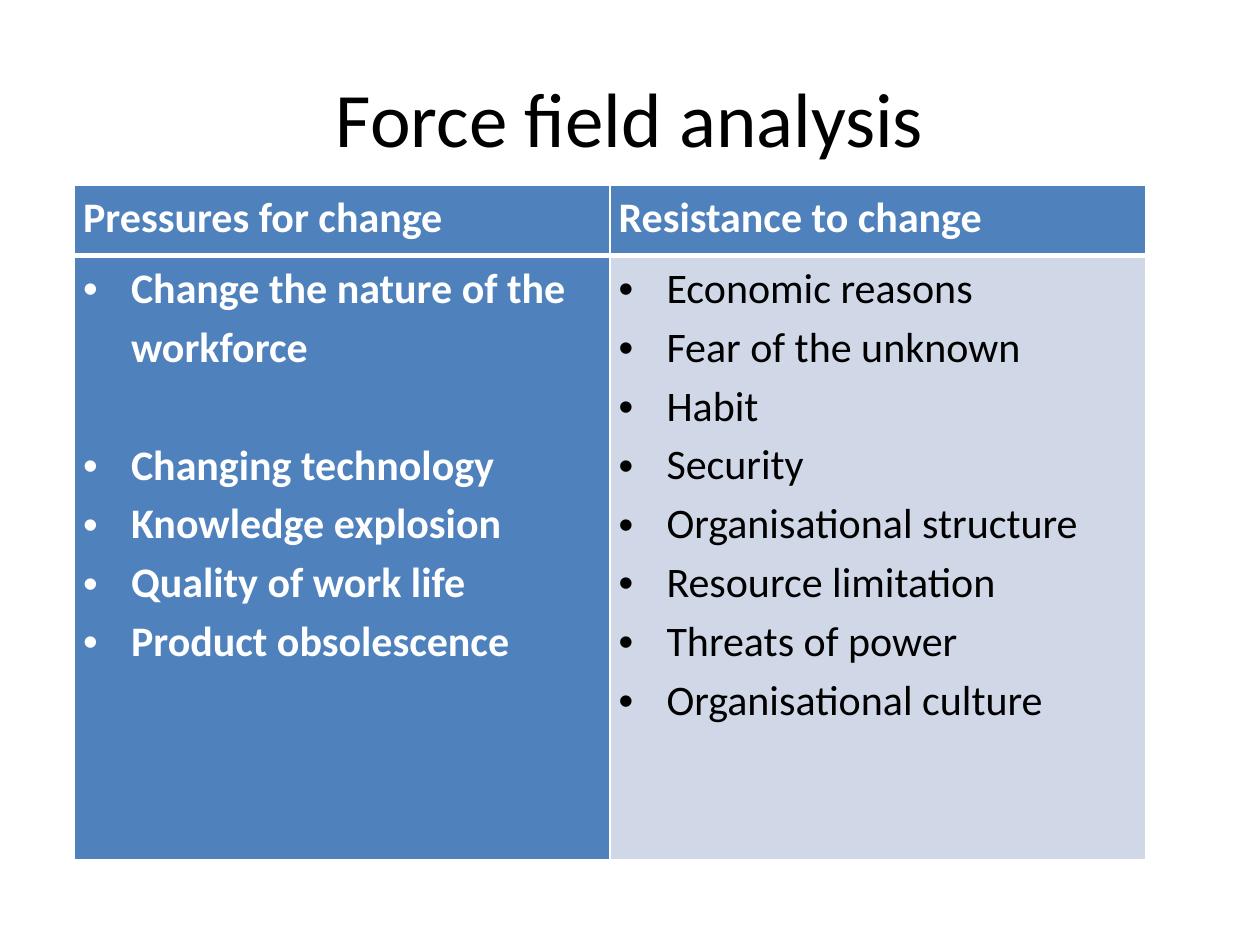
from pptx import Presentation
from pptx.dml.color import RGBColor as RGB
from pptx.enum.text import MSO_ANCHOR as Anchor, PP_ALIGN as Align
from pptx.oxml import parse_xml
from pptx.oxml.ns import nsdecls
from pptx.util import Inches, Pt

WHITE = RGB(0xFF, 0xFF, 0xFF)
BLACK = RGB(0, 0, 0)
BLUE = RGB(0x4F, 0x81, 0xBD)
PALE = RGB(0xD0, 0xD8, 0xE8)

HEADS = ["Pressures for change", "Resistance to change"]
PUSH = ["Change the nature of the workforce", "Changing technology",
        "Knowledge explosion", "Quality of work life",
        "Product obsolescence"]
RESIST = ["Economic reasons", "Fear of the unknown", "Habit", "Security",
          "Organisational structure", "Resource limitation",
          "Threats of power", "Organisational culture"]


class Deck:
    font = "Calibri"
    size = 24
    indent = 0.38

    def __init__(self):
        self.prs = Presentation()
        self.prs.slide_width = Inches(10)
        self.prs.slide_height = Inches(7.5)
        self.slide = self.prs.slides.add_slide(self.prs.slide_layouts[6])

    def style(self, para, size, color, bold=False):
        font = para.font
        font.name, font.size, font.bold = self.font, Pt(size), bold
        font.color.rgb = color

    def title(self, text, x, y, w, h):
        box = self.slide.shapes.add_textbox(
            Inches(x), Inches(y), Inches(w), Inches(h))
        frame = box.text_frame
        frame.word_wrap = True
        frame.vertical_anchor = Anchor.MIDDLE
        para = frame.paragraphs[0]
        para.text = text
        para.alignment = Align.CENTER
        self.style(para, 44, BLACK)

    def table(self, x, y, cols, rows):
        table = self.slide.shapes.add_table(
            len(rows), len(cols), Inches(x), Inches(y),
            Inches(sum(cols)), Inches(sum(rows))).table
        for col, width in zip(table.columns, cols):
            col.width = Inches(width)
        for row, height in zip(table.rows, rows):
            row.height = Inches(height)
        return table

    def edges(self, cell, top=1, bottom=1):
        props = cell._tc.get_or_add_tcPr()
        for side, width in zip("LRTB", (1, 1, top, bottom)):
            props.append(parse_xml(
                f'<a:ln{side} {nsdecls("a")} w="{Pt(width)}"><a:solidFill>'
                f'<a:srgbClr val="{WHITE}"/></a:solidFill></a:ln{side}>'))

    def bullet(self, para):
        props = para._p.get_or_add_pPr()
        props.set("marL", str(Inches(self.indent)))
        props.set("indent", str(-Inches(self.indent)))
        props.append(parse_xml(
            f'<a:buFont {nsdecls("a")} typeface="Arial"/>'))
        props.append(parse_xml(f'<a:buChar {nsdecls("a")} char="•"/>'))

    def fill(self, cell, lines, back, color, bold, bullets=False):
        """Write the lines into a cell and colour it."""
        cell.margin_left = cell.margin_right = Inches(0.07)
        cell.margin_top = cell.margin_bottom = 0
        cell.fill.solid()
        cell.fill.fore_color.rgb = back
        frame = cell.text_frame
        for i, line in enumerate(lines):
            para = frame.add_paragraph() if i else frame.paragraphs[0]
            para.text = line
            para.line_spacing = 1.15
            self.style(para, self.size, color, bold)
            if bullets:
                self.bullet(para)


def main():
    deck = Deck()
    deck.title("Force field analysis", 0.5, 0.3, 9, 1.25)
    table = deck.table(0.59, 1.47, [4.25, 4.25], [0.56, 4.79])
    looks = [(PUSH, BLUE, WHITE, True), (RESIST, PALE, BLACK, False)]
    for col, (head, look) in enumerate(zip(HEADS, looks)):
        top, body = table.cell(0, col), table.cell(1, col)
        deck.edges(top, bottom=3)
        deck.edges(body, top=3)
        deck.fill(top, [head], BLUE, WHITE, True)
        deck.fill(body, *look, bullets=True)
    # One line of air after the first pressure
    table.cell(1, 0).text_frame.paragraphs[1].space_before = Pt(33.7)
    deck.prs.save("out.pptx")


if __name__ == "__main__":
    main()
